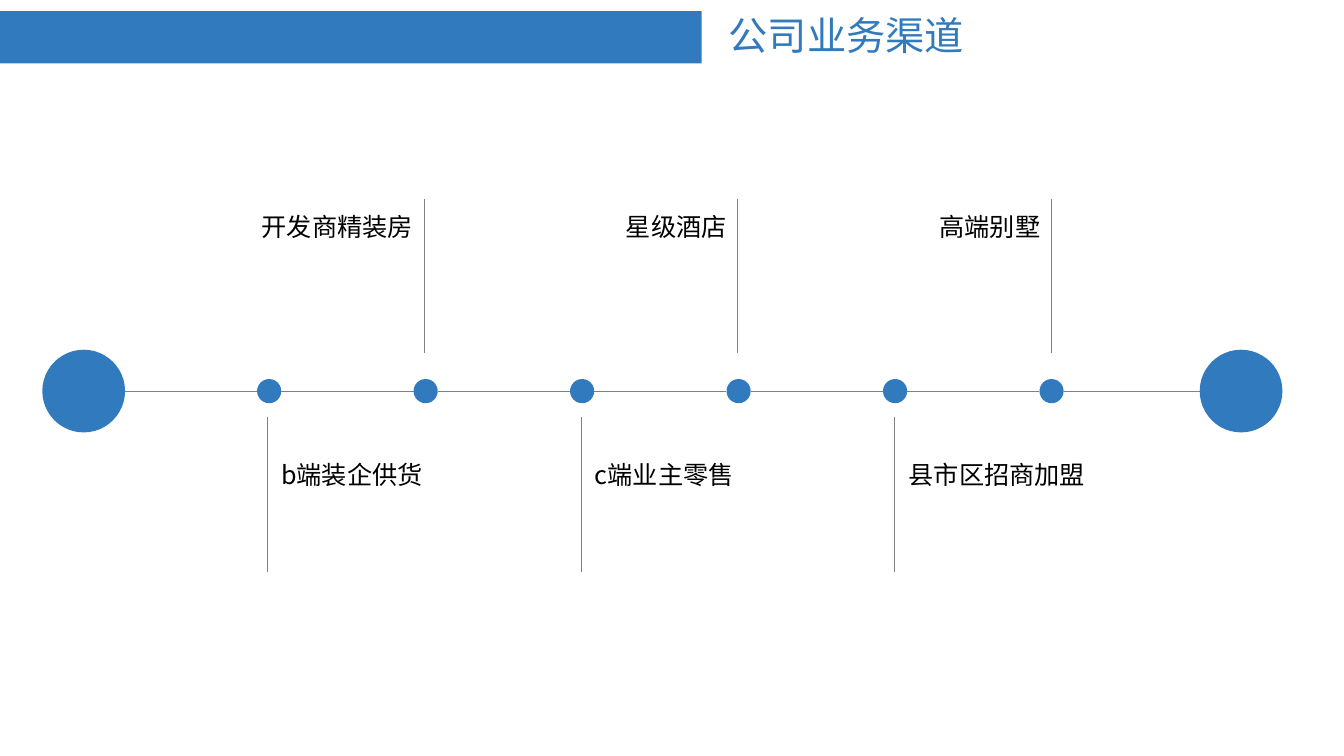
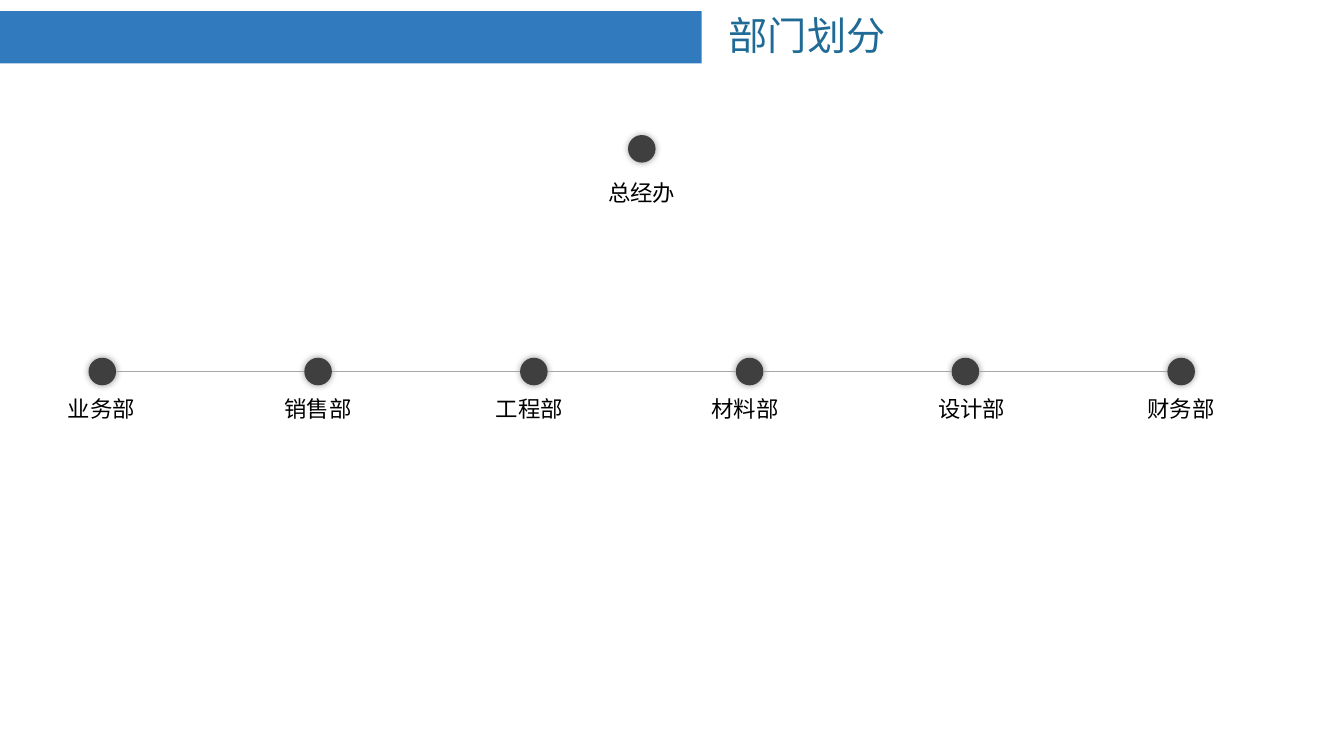
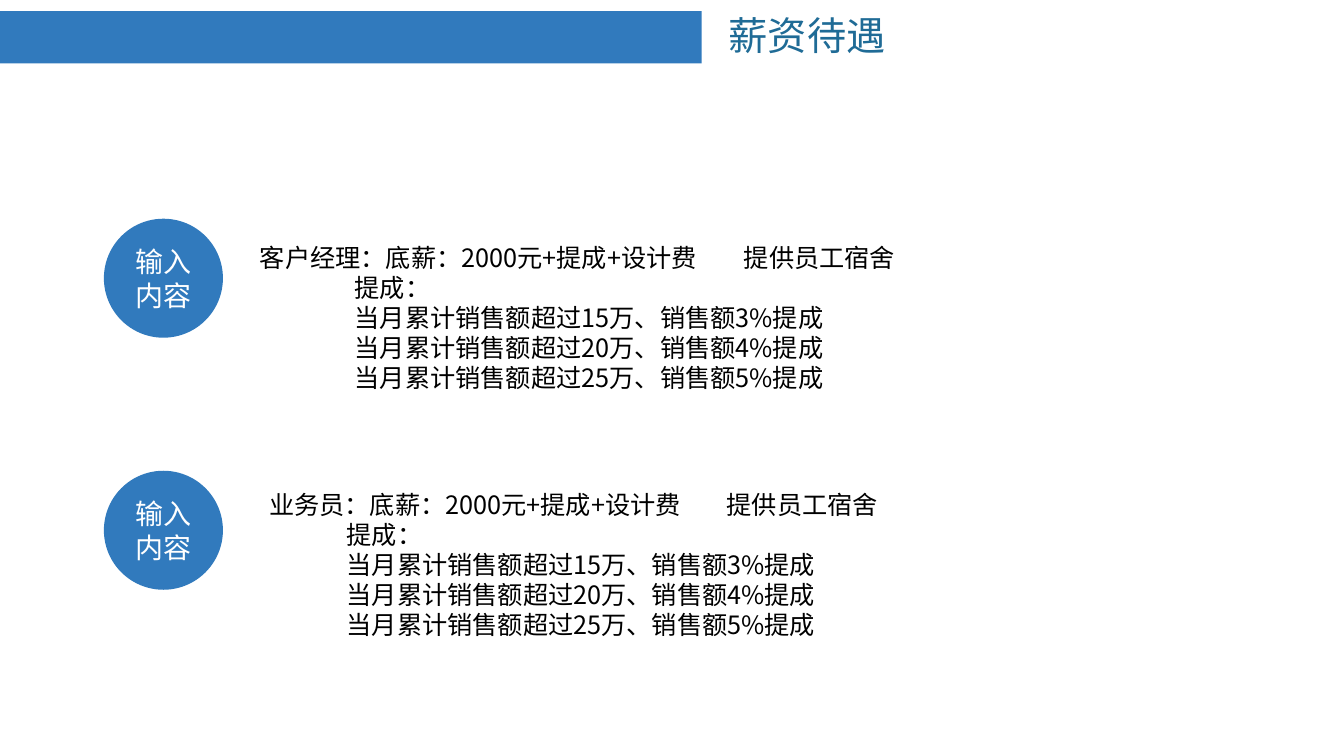
from dataclasses import dataclass
from itertools import pairwise

from lxml.etree import SubElement
from pptx import Presentation
from pptx.dml.color import RGBColor
from pptx.enum.shapes import MSO_CONNECTOR as Connector, MSO_SHAPE as Shape
from pptx.enum.text import MSO_ANCHOR as Anchor, MSO_AUTO_SIZE as AutoSize, PP_ALIGN as Align
from pptx.oxml.ns import qn
from pptx.util import Inches, Pt


@dataclass(frozen=True)
class Theme:
    font: str = "Noto Sans CJK SC"
    blue: str = "317ABD"
    teal: str = "1F6B96"
    dark: str = "3F3F3F"
    black: str = "000000"
    white: str = "FFFFFF"
    grey: str = "808080"
    silver: str = "A6A6A6"
    title: int = 28
    badge: int = 20
    body: int = 18
    caption: int = 16
    hairline: float = 0.5


THEME = Theme()


@dataclass(frozen=True)
class Box:
    left: float
    top: float
    width: float
    height: float

    def inner(self, left, top, width, height):
        """A box inside this one, in percent of its size."""
        return Box(self.x(left), self.y(top),
                   self.width * width / 100, self.height * height / 100)

    def x(self, share):
        return self.left + self.width * share / 100

    def y(self, share):
        return self.top + self.height * share / 100

    def frame(self):
        return [round(v) for v in (self.left, self.top, self.width, self.height)]


PAGE = Box(0, 0, Inches(13.33), Inches(7.5))


# Drawing helpers
def set_values(target, values):
    for name, value in values.items():
        setattr(target, name, value)


def write(shape, lines, size, color, para_format=None, frame_format=None):
    frame = shape.text_frame
    set_values(frame, {"word_wrap": True, **(frame_format or {})})
    for index, line in enumerate(lines):
        para = frame.add_paragraph() if index else frame.paragraphs[0]
        set_values(para, para_format or {})
        span = para.add_run()
        span.text = line
        set_values(span.font, {"size": Pt(size), "name": THEME.font})
        span.font.color.rgb = RGBColor.from_string(color)
        SubElement(span.font._element, qn("a:ea"), typeface=THEME.font)
    return frame.paragraphs


def add_text(slide, box, lines, size, color, para_format=None, **frame_format):
    frame_format = frame_format or {"auto_size": AutoSize.SHAPE_TO_FIT_TEXT}
    shape = slide.shapes.add_textbox(*box.frame())
    return write(shape, lines, size, color, para_format, frame_format)


def add_solid(slide, kind, box, color):
    shape = slide.shapes.add_shape(kind, *box.frame())
    shape.shadow.inherit = False
    shape.fill.solid()
    shape.fill.fore_color.rgb = RGBColor.from_string(color)
    shape.line.fill.background()
    return shape


def add_circle(slide, x, y, size, color):
    box = Box(x - size / 2, y - size / 2, size, size)
    return add_solid(slide, Shape.OVAL, box, color)


def add_line(slide, x1, y1, x2, y2, color):
    ends = [round(v) for v in (x1, y1, x2, y2)]
    line = slide.shapes.add_connector(Connector.STRAIGHT, *ends)
    line.line.width = Pt(THEME.hairline)
    line.line.color.rgb = RGBColor.from_string(color)
    SubElement(line._element.spPr, qn("a:effectLst"))


def add_links(slide, nodes, y, color):
    """Join neighbouring circles, given as (centre, size), edge to edge."""
    for (x1, size1), (x2, size2) in pairwise(nodes):
        add_line(slide, x1 + size1 / 2, y, x2 - size2 / 2, y, color)


def add_glow(shape):
    effects = shape._element.spPr.find(qn("a:effectLst"))
    shadow = SubElement(effects, qn("a:outerShdw"), blurRad=str(Pt(5)), dist="0",
                        algn="ctr", rotWithShape="0")
    color = SubElement(shadow, qn("a:srgbClr"), val=THEME.black)
    SubElement(color, qn("a:alpha"), val="40000")


def spread(first, last, count):
    return [first + (last - first) * i / (count - 1) for i in range(count)]


# Shared slide frame
def new_slide(deck, title, color):
    slide = deck.slides.add_slide(deck.slide_layouts[6])
    add_solid(slide, Shape.RECTANGLE, PAGE.inner(0, 1.47, 52.21, 6.93), THEME.blue)
    add_text(slide, PAGE.inner(53.49, 1.47, 25.73, 7.07), [title], THEME.title, color,
             {"line_spacing": 0.9}, vertical_anchor=Anchor.MIDDLE)
    return slide


# Timeline with labels below and above the axis in turn
def add_timeline(slide, box, labels):
    axis = box.y(51.62)
    end, dot = box.width * 0.0667, box.width * 0.0195
    dots = [(box.x(share), dot) for share in spread(18.29, 81.38, len(labels))]
    nodes = [(box.left + end / 2, end), *dots, (box.x(100) - end / 2, end)]
    add_links(slide, nodes, axis, THEME.grey)
    for x, size in nodes:
        add_circle(slide, x, axis, size, THEME.blue)

    label_width = 21.46
    stems = spread(18.13, 81.38, len(labels))
    for index, (stem, label) in enumerate(zip(stems, labels)):
        if index % 2:
            start, stop, top = 0, 41.35, 0
            left, align = stem - label_width - 0.1, Align.RIGHT
        else:
            start, stop, top = 58.65, 100, 66.49
            left, align = stem + 0.33, Align.LEFT
        add_line(slide, box.x(stem), box.y(start), box.x(stem), box.y(stop), THEME.grey)
        add_text(slide, box.inner(left, top, label_width, 12.97), [label], THEME.body,
                 THEME.black, {"alignment": align, "line_spacing": 1.25})


# One department: dot at the top of its box, name at the bottom
def add_department(slide, box, name, nudge=0):
    size = box.width * 0.3
    add_glow(add_circle(slide, box.x(50), box.top + size / 2, size, THEME.dark))
    height = box.width * 0.41
    label = Box(box.x(nudge), box.y(100) - height, box.width, height)
    add_text(slide, label, [name], THEME.caption, THEME.black, {"alignment": Align.CENTER})
    return box.x(50), size


def add_department_row(slide, box, departments):
    cell = 7.84
    lefts = spread(0, 100 - cell, len(departments))
    nodes = [add_department(slide, box.inner(left, 0, cell, 100), name, nudge)
             for left, (name, nudge) in zip(lefts, departments)]
    add_links(slide, nodes, box.top + nodes[0][1] / 2, THEME.silver)


# Pay scheme: round badge and its terms
def add_pay_block(slide, box, role, terms_area, indent, tab):
    size = box.width * 0.116
    badge = add_circle(slide, box.left + size / 2, box.top + size / 2, size, THEME.blue)
    write(badge, ["输入内容"], THEME.badge, THEME.white, {"alignment": Align.CENTER},
          {"vertical_anchor": Anchor.MIDDLE})

    lines = [f"{role}：底薪：2000元+提成+设计费\t提供员工宿舍", "提成："]
    lines += [f"当月累计销售额超过{sales}万、销售额{rate}%提成"
              for sales, rate in ((15, 3), (20, 4), (25, 5))]
    area = box.inner(*terms_area)
    heading, *terms = add_text(slide, area, lines, THEME.body, THEME.black)
    stops = SubElement(heading._p.get_or_add_pPr(), qn("a:tabLst"))
    SubElement(stops, qn("a:tab"), pos=str(round(area.width * tab / 100)), algn="l")
    for para in terms:
        para._p.get_or_add_pPr().set("marL", str(round(area.width * indent / 100)))


def main():
    deck = Presentation()
    set_values(deck, {"slide_width": PAGE.width, "slide_height": PAGE.height})

    channels = new_slide(deck, "公司业务渠道", THEME.blue)
    add_timeline(channels, PAGE.inner(3.15, 26.27, 92.27, 49.33),
                 ["b端装企供货", "开发商精装房", "c端业主零售",
                  "星级酒店", "县市区招商加盟", "高端别墅"])

    departments = new_slide(deck, "部门划分", THEME.teal)
    add_department(departments, PAGE.inner(44.34, 17.87, 6.83, 10.13), "总经办")
    add_department_row(departments, PAGE.inner(4.2, 47.33, 87.1, 9.2),
                       [("业务部", -1), ("销售部", 0), ("工程部", -5),
                        ("材料部", -5), ("设计部", 7), ("财务部", 0)])

    pay = new_slide(deck, "薪资待遇", THEME.teal)
    schemes = [(28.93, "客户经理", (14.24, 10.06, 85.76, 89.94), 10.77, 54.98),
               (62.27, "业务员", (15.13, 7.26, 81.43, 89.94), 9.29, 54.76)]
    for top, *scheme in schemes:
        add_pay_block(pay, PAGE.inner(7.73, top, 76.37, 23.87), *scheme)

    deck.save("out.pptx")


if __name__ == "__main__":
    main()
